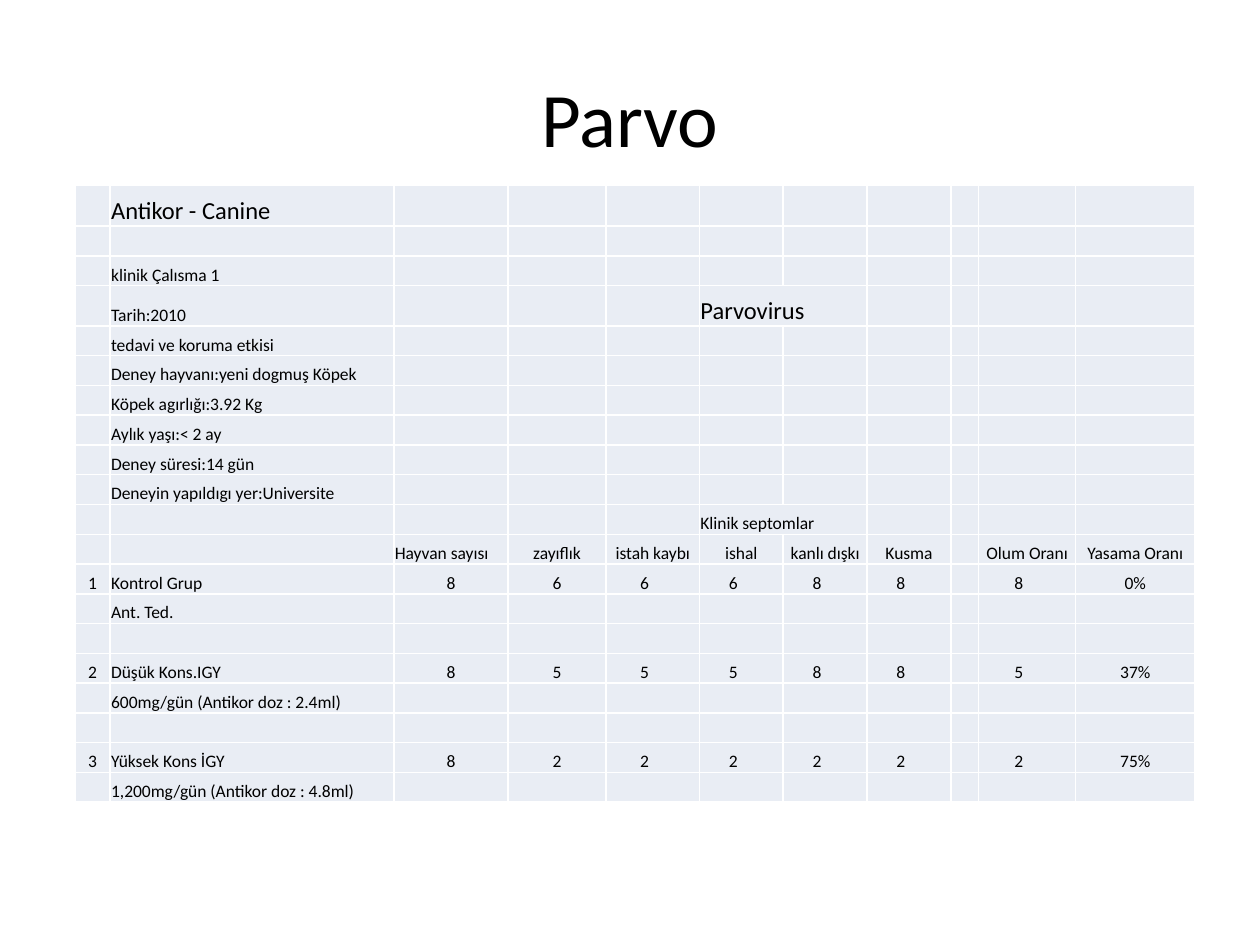
from dataclasses import dataclass

from lxml.etree import SubElement
from pptx import Presentation
from pptx.dml.color import RGBColor
from pptx.enum.text import MSO_ANCHOR, PP_ALIGN
from pptx.oxml import parse_xml
from pptx.oxml.ns import nsdecls, qn
from pptx.util import Cm, Pt


@dataclass(frozen=True)
class Theme:
    font: str = "Calibri"
    text: str = "000000"
    cell: str = "E9EDF4"
    border: str = "FFFFFF"
    title_size: int = 44
    heading_size: int = 14
    body_size: int = 10


THEME = Theme()

COLUMN_WIDTHS = [0.71, 5.72, 2.3, 1.98, 1.88, 1.69, 1.69, 1.69, 0.56, 1.95, 2.41]
ROW_COUNT = 20
ROW_HEIGHT = 0.6
TALL_ROWS = {0: 0.83, 3: 0.81}

NUMBER_COLUMN, LABEL_COLUMN, ANIMAL_COLUMN, SYMPTOM_COLUMN = 0, 1, 2, 5
SHIFTED_COLUMNS = (4, 5, 6, 7, 9)
SHIFT_MARGIN = 0.35

STUDY_LABELS = {
    2: "klinik Çalısma 1",
    3: "Tarih:2010",
    4: "tedavi ve koruma etkisi",
    5: "Deney hayvanı:yeni dogmuş Köpek",
    6: "Köpek agırlığı:3.92 Kg",
    7: "Aylık yaşı:< 2 ay",
    8: "Deney süresi:14 gün",
    9: "Deneyin yapıldıgı yer:Universite",
    13: "Ant. Ted.",
    16: "600mg/gün (Antikor doz : 2.4ml)",
    19: "1,200mg/gün (Antikor doz : 4.8ml)",
}
HEADER_ROW = 11
HEADERS = ["Hayvan sayısı", "zayıflık", "istah kaybı", "ishal", "kanlı dışkı",
           "Kusma", "", "Olum Oranı", "Yasama Oranı"]
GROUPS = {
    12: ["1", "Kontrol Grup", "8", "6", "6", "6", "8", "8", "", "8", "0%"],
    15: ["2", "Düşük Kons.IGY", "8", "5", "5", "5", "8", "8", "", "5", "37%"],
    18: ["3", "Yüksek Kons İGY", "8", "2", "2", "2", "2", "2", "", "2", "75%"],
}


def add_run(paragraph, text, size):
    run = paragraph.add_run()
    run.text = text
    run.font.name = THEME.font
    run.font.size = Pt(size)
    run.font.color.rgb = RGBColor.from_string(THEME.text)


def add_title(slide, text):
    title = slide.shapes.title
    title.left, title.top, title.width, title.height = Cm(1.27), Cm(0.76), Cm(22.86), Cm(3.18)
    title.text_frame.vertical_anchor = MSO_ANCHOR.MIDDLE
    paragraph = title.text_frame.paragraphs[0]
    paragraph.alignment = PP_ALIGN.CENTER
    add_run(paragraph, text, THEME.title_size)


def add_borders(cell):
    properties = cell._tc.get_or_add_tcPr()
    for position, side in enumerate(("lnL", "lnR", "lnT", "lnB")):
        properties.insert(position, parse_xml(
            f'<a:{side} {nsdecls("a")} w="{Pt(1)}"><a:solidFill>'
            f'<a:srgbClr val="{THEME.border}"/></a:solidFill></a:{side}>'))


def format_cell(cell):
    cell.fill.solid()
    cell.fill.fore_color.rgb = RGBColor.from_string(THEME.cell)
    add_borders(cell)
    cell.vertical_anchor = MSO_ANCHOR.BOTTOM
    cell.margin_left = cell.margin_right = cell.margin_top = Cm(0.02)
    cell.margin_bottom = Cm(0)
    if not cell.text_frame.text:
        # An empty cell would otherwise stretch its row with the default type size.
        paragraph = cell.text_frame.paragraphs[0]
        SubElement(paragraph._p, qn("a:endParaRPr"), sz=str(THEME.body_size * 100))


def write_cell(cell, text, size=THEME.body_size, alignment=PP_ALIGN.LEFT):
    paragraph = cell.text_frame.paragraphs[0]
    paragraph.alignment = alignment
    add_run(paragraph, text, size)


def write_study(table):
    write_cell(table.cell(0, LABEL_COLUMN), "Antikor - Canine", THEME.heading_size)
    for row, label in STUDY_LABELS.items():
        write_cell(table.cell(row, LABEL_COLUMN), label)
    for row, text, size in ((3, "Parvovirus", THEME.heading_size),
                            (10, "Klinik septomlar", THEME.body_size)):
        cell = table.cell(row, SYMPTOM_COLUMN)
        cell.merge(table.cell(row, SYMPTOM_COLUMN + 1))
        write_cell(cell, text, size)


def write_results(table):
    for column, header in enumerate(HEADERS, start=ANIMAL_COLUMN):
        if header:
            alignment = PP_ALIGN.LEFT if column == ANIMAL_COLUMN else PP_ALIGN.CENTER
            write_cell(table.cell(HEADER_ROW, column), header, alignment=alignment)
    for row, values in GROUPS.items():
        for column, value in enumerate(values):
            if value:
                alignment = PP_ALIGN.LEFT if column == LABEL_COLUMN else PP_ALIGN.CENTER
                write_cell(table.cell(row, column), value, alignment=alignment)


def add_study_table(slide):
    heights = [TALL_ROWS.get(row, ROW_HEIGHT) for row in range(ROW_COUNT)]
    frame = slide.shapes.add_table(ROW_COUNT, len(COLUMN_WIDTHS), Cm(1.51), Cm(3.73),
                                   Cm(sum(COLUMN_WIDTHS)), Cm(sum(heights)))
    table = frame.table
    table.first_row = table.horz_banding = False
    for column, width in zip(table.columns, COLUMN_WIDTHS):
        column.width = Cm(width)
    for row, height in zip(table.rows, heights):
        row.height = Cm(height)
    write_study(table)
    write_results(table)
    for cell in table.iter_cells():
        format_cell(cell)
    for row in GROUPS:
        for column in SHIFTED_COLUMNS:
            table.cell(row, column).margin_right = Cm(SHIFT_MARGIN)


def main():
    presentation = Presentation()
    presentation.slide_width, presentation.slide_height = Cm(25.4), Cm(19.05)
    slide = presentation.slides.add_slide(presentation.slide_layouts[5])
    add_title(slide, "Parvo")
    add_study_table(slide)
    presentation.save("out.pptx")


if __name__ == "__main__":
    main()
